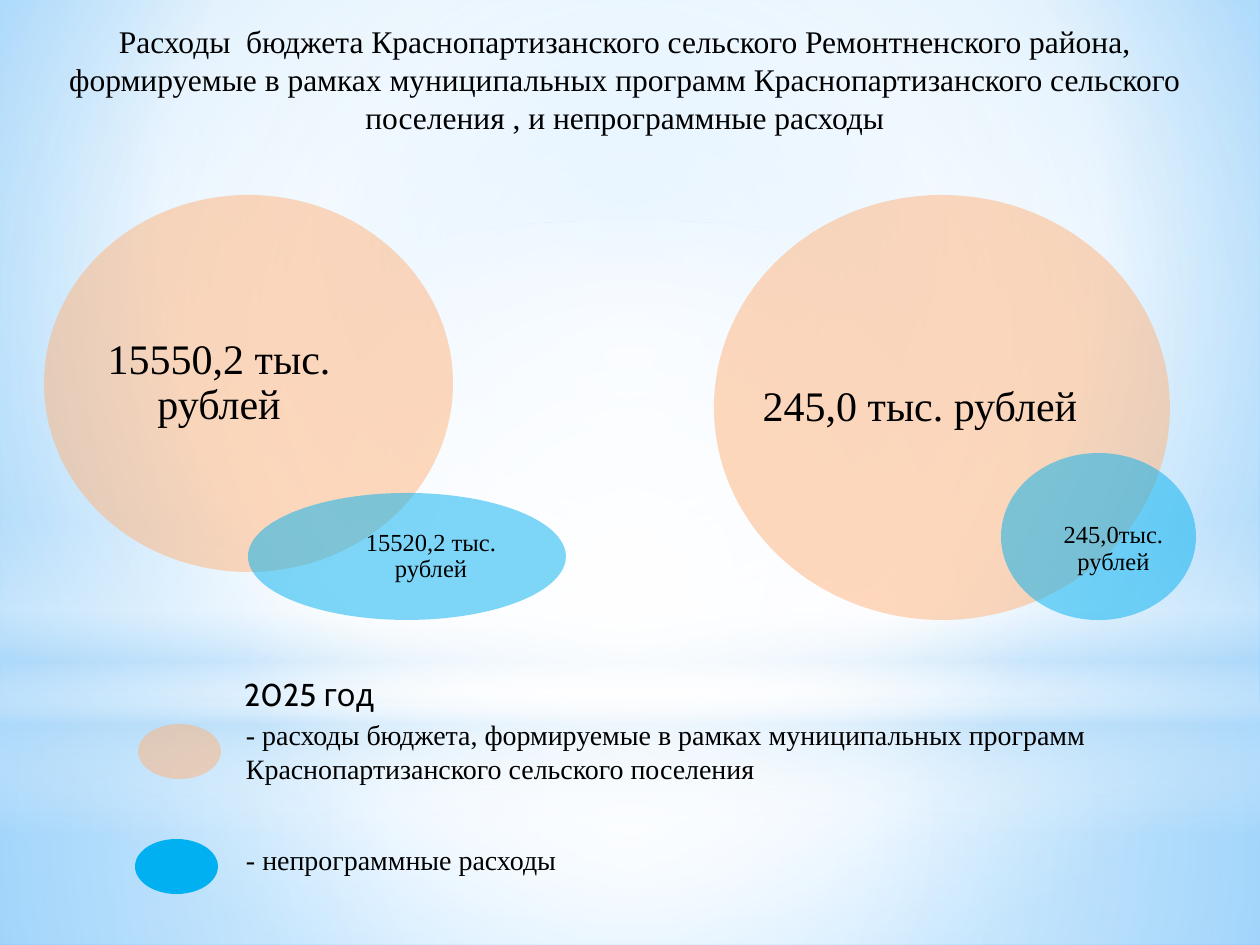
import lxml.etree
import pptx
import pptx.dml.color
import pptx.enum.shapes
import pptx.enum.text
import pptx.oxml
import pptx.oxml.ns
import pptx.util

SCALE = 914400 / 126  # EMU in one px
SIZE = (1260, 945)


class Theme:
    peach, blue, black = "FFB37A", "00B0F0", "000000"
    white, pale = "FFFFFF", "B4DCFA"
    serif, sans = "Times New Roman", "Cabin"
    big, head, body, small = 24, 18, 16, 14
    pad = (13, 6)


MID = (50, 50, 50, 50)

# Stops are (position %, colour, opacity %); focus None means top to bottom.
BACK = dict(stops=[(0, "9ED5FF", 100), (60, Theme.white, 100),
                   (100, "5BB9FF", 100)], focus=(20, 10, 20, 60))
GLOWS = [
    ("RECTANGLE", (0, 703, 1260, 242), dict(focus=MID, stops=[
        (0, Theme.white, 91), (37, Theme.white, 76), (100, Theme.pale, 79)])),
    ("RECTANGLE", (0, 0, 1260, 703), dict(focus=MID, stops=[
        (0, Theme.white, 89), (48, Theme.white, 62), (100, Theme.pale, 79)])),
    ("RECTANGLE", (0, 519, 1260, 315), dict(focus=None, stops=[
        (0, Theme.white, 0), (29, Theme.white, 30), (45, Theme.pale, 40),
        (55, Theme.white, 26), (65, Theme.pale, 60), (100, Theme.white, 0)])),
    ("OVAL", (0, 221, 1260, 703), dict(focus=MID, stops=[
        (0, Theme.white, 100), (56, Theme.white, 0)])),
]

TITLE = ("Расходы  бюджета Краснопартизанского сельского Ремонтненского района, "
         "формируемые в рамках муниципальных программ Краснопартизанского "
         "сельского поселения , и непрограммные расходы")

# Circle box, colour, label, label box, type size
CIRCLES = [
    ((714, 195, 456, 425), Theme.peach, "245,0 тыс. рублей",
     (757, 233, 326, 349), Theme.big),
    ((1001, 453, 195, 167), Theme.blue, " 245,0тыс. рублей",
     (1062, 475, 103, 122), Theme.small),
    ((44, 195, 409, 377), Theme.peach, "15550,2 тыс. рублей",
     (101, 239, 236, 289), Theme.big),
    ((248, 493, 318, 127), Theme.blue, "15520,2 тыс. рублей",
     (339, 508, 184, 97), Theme.small),
]

# Key box, colour, opacity %, wording, text box
LEGEND = [
    ((138, 724, 83, 55), Theme.peach, 50,
     "- расходы бюджета, формируемые в рамках муниципальных программ "
     "Краснопартизанского сельского поселения", (233, 712, 973, 81)),
    ((135, 839, 83, 55), Theme.blue, 100,
     "- непрограммные расходы", (233, 837, 853, 47)),
]


def emu(box):
    return [round(n * SCALE) for n in box]


def rgb(code):
    return pptx.dml.color.RGBColor.from_string(code)


def blend(root, stops, focus):
    """Put a gradient where root has its solid fill."""
    marks = "".join(
        f'<a:gs pos="{pos * 1000}"><a:srgbClr val="{code}">'
        f'<a:alpha val="{alpha * 1000}"/></a:srgbClr></a:gs>'
        for pos, code, alpha in stops)
    if focus:
        sides = " ".join(f'{side}="{n * 1000}"' for side, n in zip("ltrb", focus))
        way = f'<a:path path="circle"><a:fillToRect {sides}/></a:path>'
    else:
        way = '<a:lin ang="5400000" scaled="0"/>'
    grad = pptx.oxml.parse_xml(
        f'<a:gradFill {pptx.oxml.ns.nsdecls("a")} rotWithShape="1">'
        f'<a:gsLst>{marks}</a:gsLst>{way}</a:gradFill>')
    old = root.xpath(".//a:solidFill")[0]
    old.getparent().replace(old, grad)


def draw(slide, kind, box, code=Theme.white, alpha=100):
    kind = getattr(pptx.enum.shapes.MSO_SHAPE, kind)
    shape = slide.shapes.add_shape(kind, *emu(box))
    shape.shadow.inherit = False
    shape.line.fill.background()
    shape.fill.solid()
    shape.fill.fore_color.rgb = rgb(code)
    if alpha < 100:
        tint = shape.element.xpath(".//a:solidFill/a:srgbClr")[0]
        lxml.etree.SubElement(tint, pptx.oxml.ns.qn("a:alpha"),
                              val=str(alpha * 1000))
    return shape


def write(slide, text, box, size, font=Theme.serif, align="LEFT",
          anchor="TOP", pad=Theme.pad, lead=None):
    frame = slide.shapes.add_textbox(*emu(box)).text_frame
    frame.word_wrap = True
    frame.vertical_anchor = getattr(pptx.enum.text.MSO_ANCHOR, anchor)
    wide, high = emu(pad)
    frame.margin_left = frame.margin_right = wide
    frame.margin_top = frame.margin_bottom = high
    para = frame.paragraphs[0]
    para.alignment = getattr(pptx.enum.text.PP_ALIGN, align)
    if lead:
        para.line_spacing = lead
    run = para.add_run()
    run.text = text
    run.font.name = font
    run.font.size = pptx.util.Pt(size)
    run.font.color.rgb = rgb(Theme.black)


def main():
    deck = pptx.Presentation()
    deck.slide_width, deck.slide_height = emu(SIZE)
    slide = deck.slides.add_slide(deck.slide_layouts[6])

    slide.background.fill.solid()
    blend(slide.element, **BACK)
    for kind, box, grad in GLOWS:
        blend(draw(slide, kind, box).element, **grad)

    write(slide, TITLE, (54, 16, 1142, 127), Theme.head, align="CENTER")
    for box, code, label, spot, size in CIRCLES:
        draw(slide, "OVAL", box, code, 50)
        write(slide, label, spot, size, align="CENTER", anchor="MIDDLE",
              pad=(0, 0), lead=0.9)
    for box, code, alpha, text, spot in LEGEND:
        draw(slide, "OVAL", box, code, alpha)
        write(slide, text, spot, Theme.body)
    write(slide, "2025 год", (147, 669, 324, 50), Theme.head,
          font=Theme.sans, align="CENTER")

    deck.save("out.pptx")


if __name__ == "__main__":
    main()
